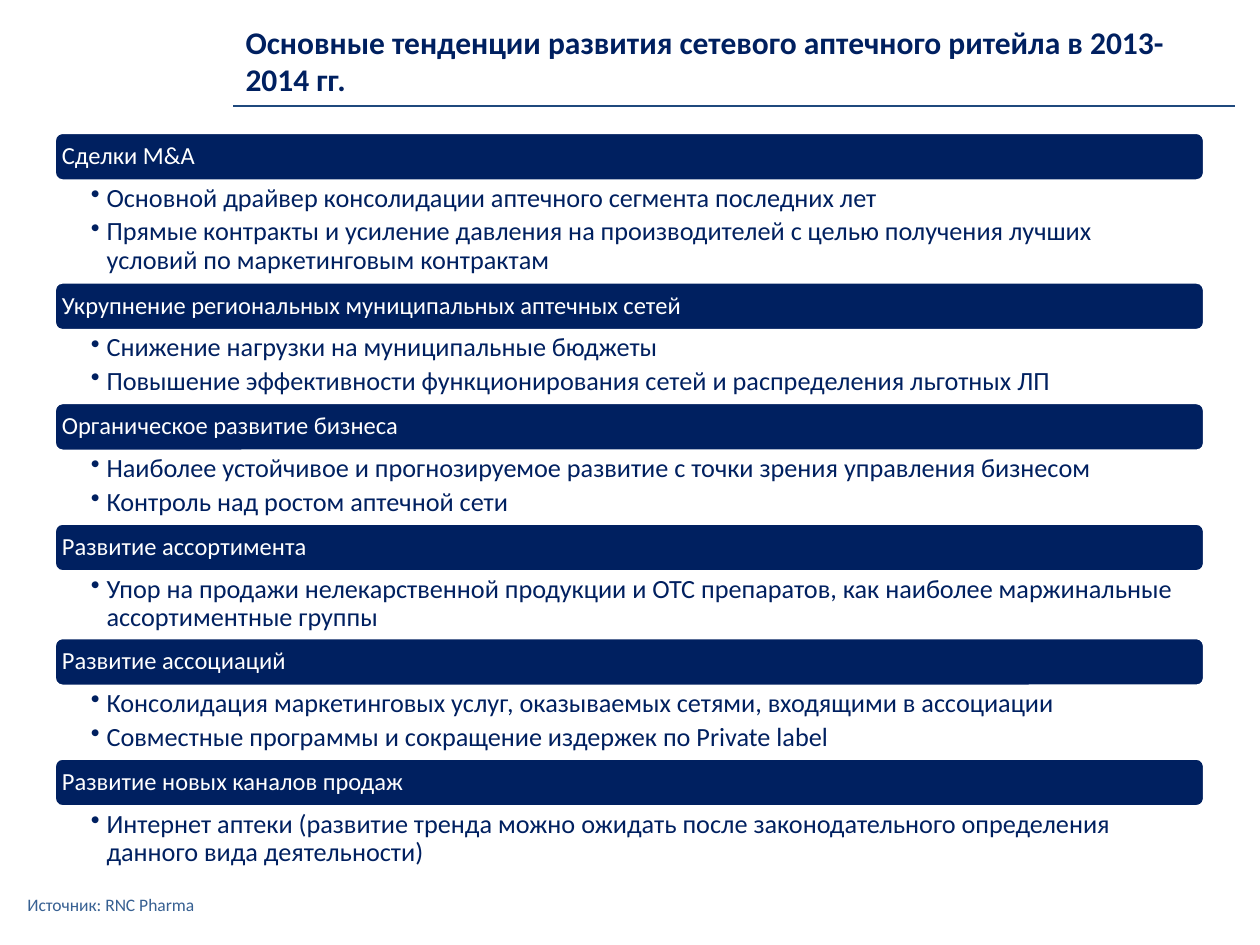
from typing import NamedTuple

from lxml.etree import SubElement
from pptx import Presentation
from pptx.dml.color import RGBColor
from pptx.enum.shapes import MSO_CONNECTOR as Connector, MSO_SHAPE as Preset
from pptx.enum.text import MSO_ANCHOR as Anchor, MSO_AUTO_SIZE as AutoSize, PP_ALIGN as Align
from pptx.oxml.ns import qn
from pptx.util import Pt

NAVY, WHITE, RULE_BLUE, SOURCE_BLUE = "002060", "FFFFFF", "1F497D", "376092"
LEFT, TOP, WIDTH = 31, 75.6, 657.4
HEADER_HEIGHT = 27.9


class Trend(NamedTuple):
    heading: str
    body_height: float
    bullets: list[str]


TRENDS = [
    Trend("Сделки М&А", 57.6, [
        "Основной драйвер консолидации аптечного сегмента последних лет",
        "Прямые контракты и усиление давления на производителей с целью получения лучших "
        "условий по маркетинговым контрактам",
    ]),
    Trend("Укрупнение региональных муниципальных аптечных сетей", 41, [
        "Снижение нагрузки на муниципальные бюджеты",
        "Повышение эффективности функционирования сетей и распределения льготных ЛП",
    ]),
    Trend("Органическое развитие бизнеса", 41, [
        "Наиболее устойчивое и прогнозируемое развитие с точки зрения управления бизнесом",
        "Контроль над ростом аптечной сети",
    ]),
    Trend("Развитие ассортимента", 37.5, [
        "Упор на продажи нелекарственной продукции и ОТС препаратов, как наиболее "
        "маржинальные ассортиментные группы",
    ]),
    Trend("Развитие ассоциаций", 41, [
        "Консолидация маркетинговых услуг, оказываемых сетями, входящими в ассоциации",
        "Совместные программы и сокращение издержек по Private label",
    ]),
    Trend("Развитие новых каналов продаж", 37.5, [
        "Интернет аптеки (развитие тренда можно ожидать после законодательного определения "
        "данного вида деятельности)",
    ]),
]


def color(value: str) -> RGBColor:
    return RGBColor.from_string(value)


def set_font(paragraph, size: float, value: str, bold: bool = False) -> None:
    font = paragraph.font
    font.name, font.size, font.bold = "Calibri", Pt(size), bold
    font.color.rgb = color(value)


def set_insets(frame, left: float, top: float, right: float, bottom: float) -> None:
    frame.margin_left, frame.margin_top = Pt(left), Pt(top)
    frame.margin_right, frame.margin_bottom = Pt(right), Pt(bottom)


def add_text_frame(slide, left: float, top: float, width: float, height: float):
    frame = slide.shapes.add_textbox(Pt(left), Pt(top), Pt(width), Pt(height)).text_frame
    frame.word_wrap = True
    return frame


def add_title(slide, text: str) -> None:
    frame = add_text_frame(slide, 133.2, 9.4, 555.8, 51.1)
    frame.auto_size = AutoSize.SHAPE_TO_FIT_TEXT
    frame.text = text
    set_font(frame.paragraphs[0], 18, NAVY, bold=True)


def add_title_rule(slide) -> None:
    rule = slide.shapes.add_connector(Connector.STRAIGHT, Pt(133.2), Pt(60.5), Pt(705.6), Pt(60.5))
    rule.line.color.rgb = color(RULE_BLUE)
    rule.line.width = Pt(1.5)
    SubElement(rule._element.spPr, qn("a:effectLst"))


def add_header(slide, top: float, text: str) -> None:
    header = slide.shapes.add_shape(
        Preset.ROUNDED_RECTANGLE, Pt(LEFT), Pt(top), Pt(WIDTH), Pt(HEADER_HEIGHT))
    header.shadow.inherit = False
    header.fill.solid()
    header.fill.fore_color.rgb = color(NAVY)
    header.line.color.rgb = color(WHITE)
    header.line.width = Pt(2)
    frame = header.text_frame
    frame.word_wrap = True
    frame.vertical_anchor = Anchor.MIDDLE
    set_insets(frame, 3, 3, 3, 3)
    frame.text = text
    paragraph = frame.paragraphs[0]
    paragraph.alignment = Align.LEFT
    paragraph.line_spacing = 0.9
    set_font(paragraph, 14, WHITE)


def add_bullets(slide, top: float, height: float, bullets: list[str]) -> None:
    frame = add_text_frame(slide, LEFT, top, WIDTH, height)
    set_insets(frame, 20.9, 2, 10.8, 2)
    frame.text = "\n".join(bullets)
    for paragraph in frame.paragraphs:
        paragraph.level = 1
        paragraph.line_spacing = 0.9
        paragraph.space_after = Pt(3)
        properties = paragraph._p.get_or_add_pPr()
        properties.set("marL", str(Pt(9)))
        properties.set("indent", str(Pt(-9)))
        SubElement(properties, qn("a:buChar"), char="•")
        set_font(paragraph, 15, NAVY)


def add_source(slide, text: str) -> None:
    frame = add_text_frame(slide, 8.6, 502.6, 228.2, 28.8)
    frame.vertical_anchor = Anchor.MIDDLE
    frame.text = text
    set_font(frame.paragraphs[0], 10, SOURCE_BLUE)


def main() -> None:
    presentation = Presentation()
    presentation.slide_width, presentation.slide_height = Pt(720), Pt(540)
    slide = presentation.slides.add_slide(presentation.slide_layouts[6])
    add_title_rule(slide)
    add_title(slide, "Основные тенденции развития сетевого аптечного ритейла в 2013-2014 гг.")
    add_source(slide, "Источник: RNC Pharma")
    top = TOP
    for trend in TRENDS:
        add_header(slide, top, trend.heading)
        add_bullets(slide, top + HEADER_HEIGHT, trend.body_height, trend.bullets)
        top += HEADER_HEIGHT + trend.body_height
    presentation.save("out.pptx")


if __name__ == "__main__":
    main()
